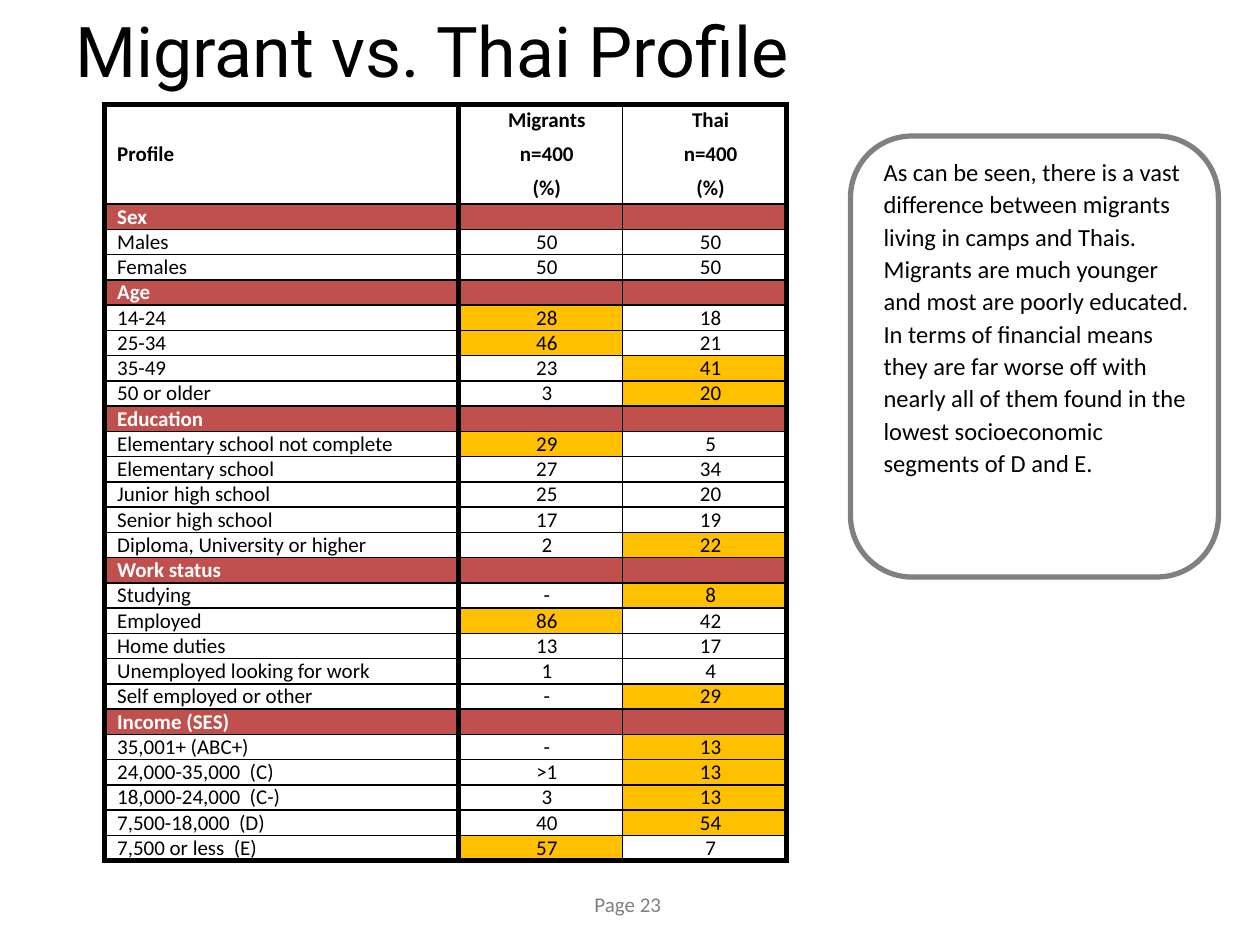
import lxml.etree
import pptx
import pptx.dml.color
import pptx.enum.shapes
import pptx.enum.text
import pptx.oxml.ns
import pptx.util

Inches, Pt = pptx.util.Inches, pptx.util.Pt
ALIGN, ANCHOR = pptx.enum.text.PP_ALIGN, pptx.enum.text.MSO_ANCHOR
COLORS = {"black": "000000", "white": "FFFFFF", "gray": "808080",
          "section": "C0504D", "highlight": "FFC000"}


def rgb(name):
    return pptx.dml.color.RGBColor.from_string(COLORS[name])


def add_run(p, text, size, color="black", font="Calibri", bold=False):
    r = p.add_run()
    r.text = text
    r.font.size, r.font.name, r.font.bold = Pt(size), font, bold
    r.font.color.rgb = rgb(color)


prs = pptx.Presentation()
prs.slide_width, prs.slide_height = Inches(10), Inches(7.5)
s = prs.slides.add_slide(prs.slide_layouts[6])

# Page number and title
tf = s.shapes.add_textbox(Inches(4.62), Inches(7.03), Inches(0.77), Inches(0.3)).text_frame
tf.word_wrap = False
add_run(tf.paragraphs[0], "Page 23", 12, "gray")

tf = s.shapes.add_textbox(Inches(0.5), Inches(0), Inches(9), Inches(0.78)).text_frame
tf.word_wrap = True
tf.vertical_anchor = ANCHOR.MIDDLE
add_run(tf.paragraphs[0], "Migrant vs. Thai Profile", 40, font="Roboto")

# Profile table: a section row has a label only, a trailing * highlights a value
ROWS = [
    ("Profile", "Migrants\nn=400\n(%)", "Thai\nn=400\n(%)"),
    ("Sex",),
    ("Males", "50", "50"),
    ("Females", "50", "50"),
    ("Age",),
    ("14-24", "28*", "18"),
    ("25-34", "46*", "21"),
    ("35-49", "23", "41*"),
    ("50 or older", "3", "20*"),
    ("Education",),
    ("Elementary school not complete", "29*", "5"),
    ("Elementary school", "27", "34"),
    ("Junior high school", "25", "20"),
    ("Senior high school", "17", "19"),
    ("Diploma, University or higher", "2", "22*"),
    ("Work status",),
    ("Studying", "-", "8*"),
    ("Employed", "86*", "42"),
    ("Home duties", "13", "17"),
    ("Unemployed looking for work", "1", "4"),
    ("Self employed or other", "-", "29*"),
    ("Income (SES)",),
    ("35,001+ (ABC+)", "-", "13*"),
    ("24,000-35,000  (C)", ">1", "13*"),
    ("18,000-24,000  (C-)", "3", "13*"),
    ("7,500-18,000  (D)", "40", "54*"),
    ("7,500 or less  (E)", "57*", "7"),
]
COL_WIDTHS = [2.81, 1.3, 1.3]
COL_LINES = [3, 3, 1, 3]  # vertical rules, left to right
HEAD_H, ROW_H = 0.79, 0.2
last = len(ROWS) - 1

table = s.shapes.add_table(len(ROWS), 3, Inches(0.83), Inches(0.83), Inches(sum(COL_WIDTHS)),
                           Inches(HEAD_H + last * ROW_H)).table
table.first_row = table.horz_banding = False
for col, width in zip(table.columns, COL_WIDTHS):
    col.width = Inches(width)

for i, row in enumerate(ROWS):
    table.rows[i].height = Inches(ROW_H if i else HEAD_H)
    section = len(row) == 1
    for j in range(3):
        text = row[j] if j < len(row) else ""
        cell = table.cell(i, j)
        cell.margin_left = Inches(0.1)
        cell.margin_right = cell.margin_top = cell.margin_bottom = 0
        cell.vertical_anchor = ANCHOR.MIDDLE
        if section or text.endswith("*"):
            cell.fill.solid()
            cell.fill.fore_color.rgb = rgb("section" if section else "highlight")
        else:
            cell.fill.background()

        tf = cell.text_frame
        for n, line in enumerate(text.rstrip("*").split("\n")):
            p = tf.add_paragraph() if n else tf.paragraphs[0]
            p.alignment = ALIGN.CENTER if j else ALIGN.LEFT
            p.space_after = Pt(4.8)
            if line:
                add_run(p, line, 12, "white" if section else "black", bold=section or i == 0)
            else:  # keeps an empty cell as low as its row
                end = lxml.etree.SubElement(p._p, pptx.oxml.ns.qn("a:endParaRPr"))
                end.set("sz", "1200")

        borders = {"a:lnL": COL_LINES[j], "a:lnR": COL_LINES[j + 1],
                   "a:lnT": 1 if i else 3, "a:lnB": 3 if i == last else 1}
        tcPr = cell._tc.get_or_add_tcPr()
        for n, (tag, width) in enumerate(borders.items()):
            ln = lxml.etree.Element(pptx.oxml.ns.qn(tag), w=str(Pt(width)))
            fill = lxml.etree.SubElement(ln, pptx.oxml.ns.qn("a:solidFill"))
            lxml.etree.SubElement(fill, pptx.oxml.ns.qn("a:srgbClr"), val=COLORS["black"])
            tcPr.insert(n, ln)

# Comment box
sp = s.shapes.add_shape(pptx.enum.shapes.MSO_SHAPE.ROUNDED_RECTANGLE,
                        Inches(6.75), Inches(1.08), Inches(2.92), Inches(3.5))
sp.shadow.inherit = False
sp.fill.background()
sp.line.color.rgb = rgb("gray")
sp.line.width = Pt(3)
tf = sp.text_frame
tf.word_wrap = True
tf.vertical_anchor = ANCHOR.TOP
tf.margin_left = tf.margin_right = tf.margin_top = tf.margin_bottom = 0
p = tf.paragraphs[0]
p.alignment = ALIGN.LEFT
p.line_spacing = 1.1
p._p.get_or_add_pPr().set("marL", str(Inches(0.12)))
add_run(p, "As can be seen, there is a vast difference between migrants living in camps and Thais. "
           "Migrants are much younger and most are poorly educated. In terms of financial means "
           "they are far worse off with nearly all of them found in the lowest socioeconomic "
           "segments of D and E.", 14)

prs.save("out.pptx")
